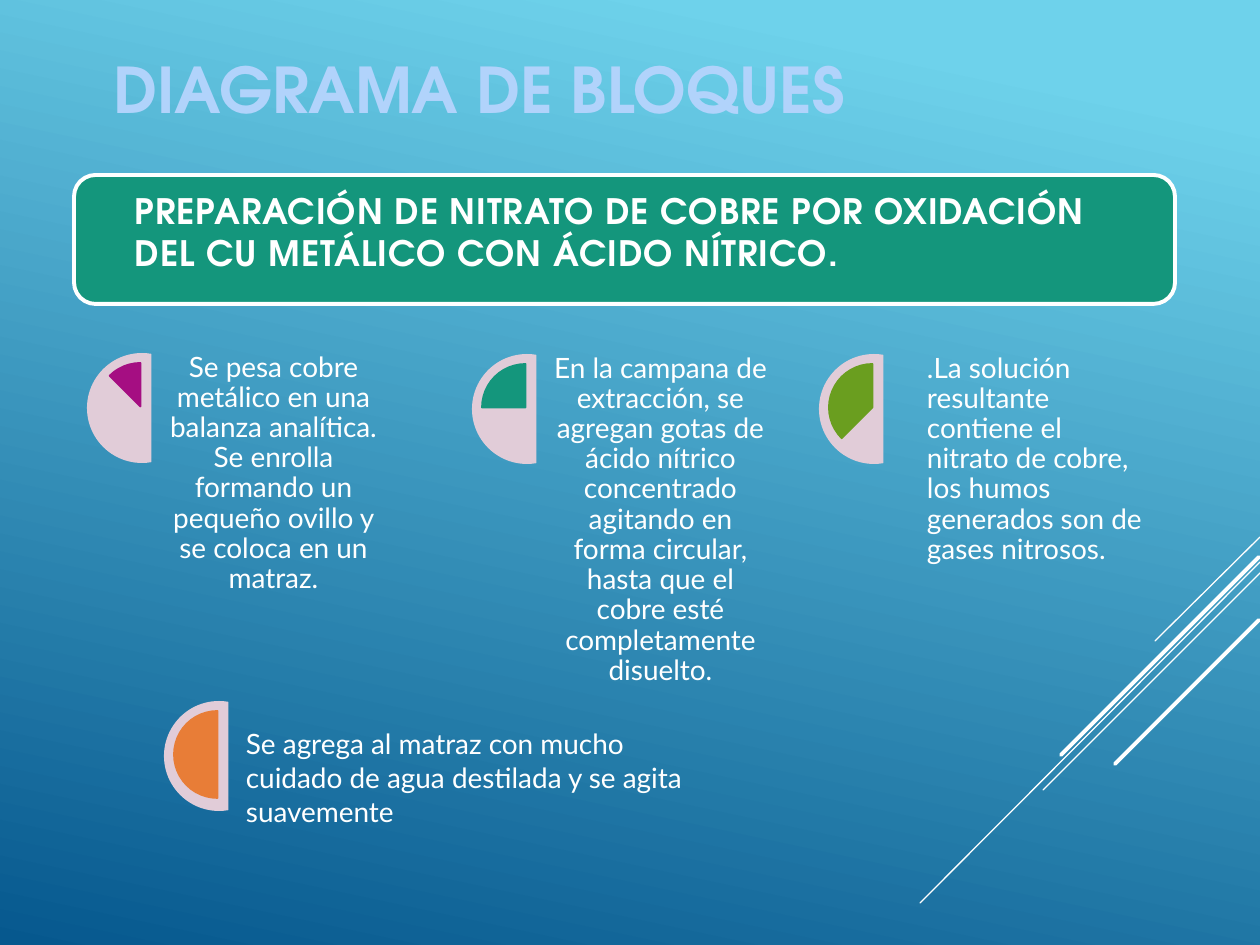
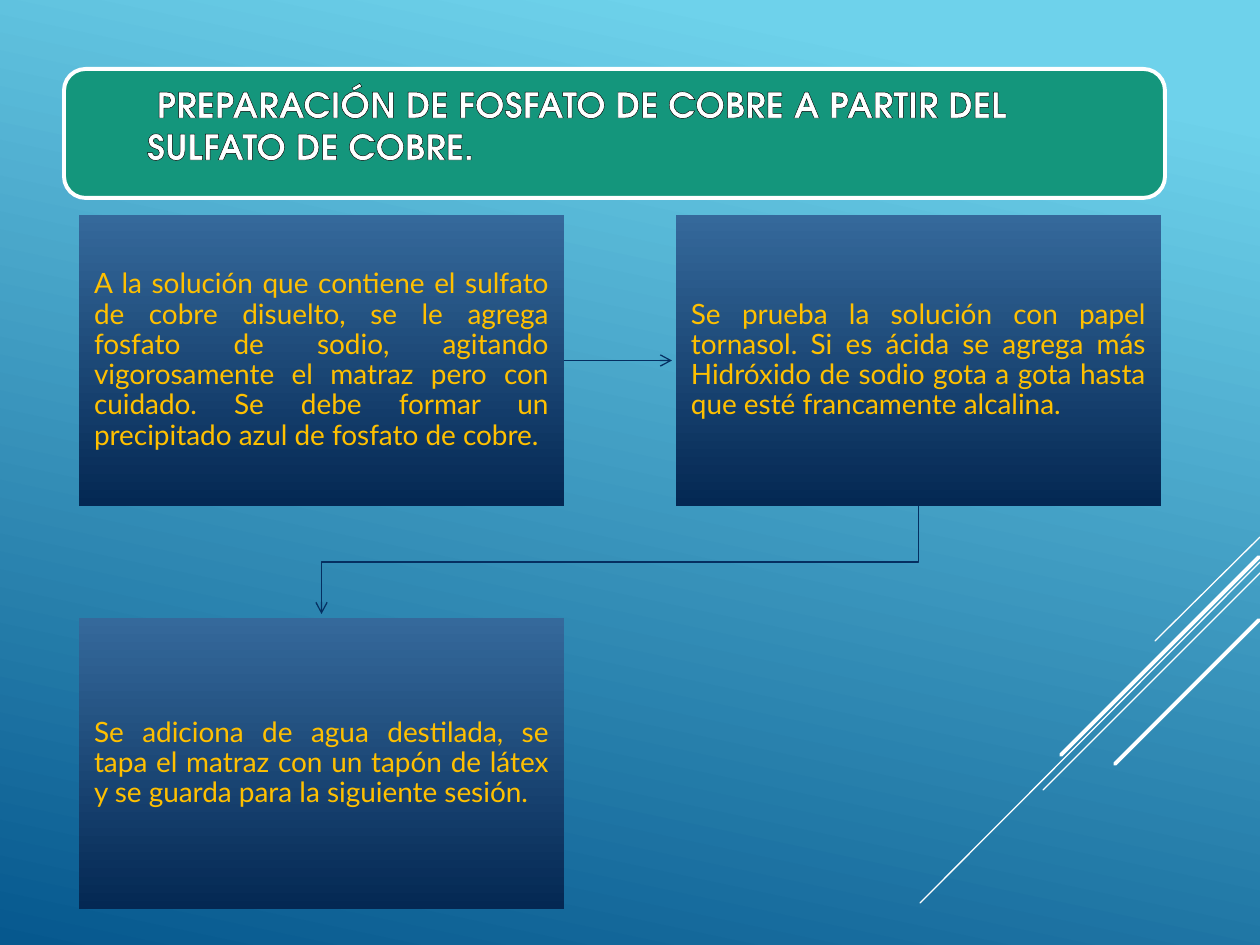
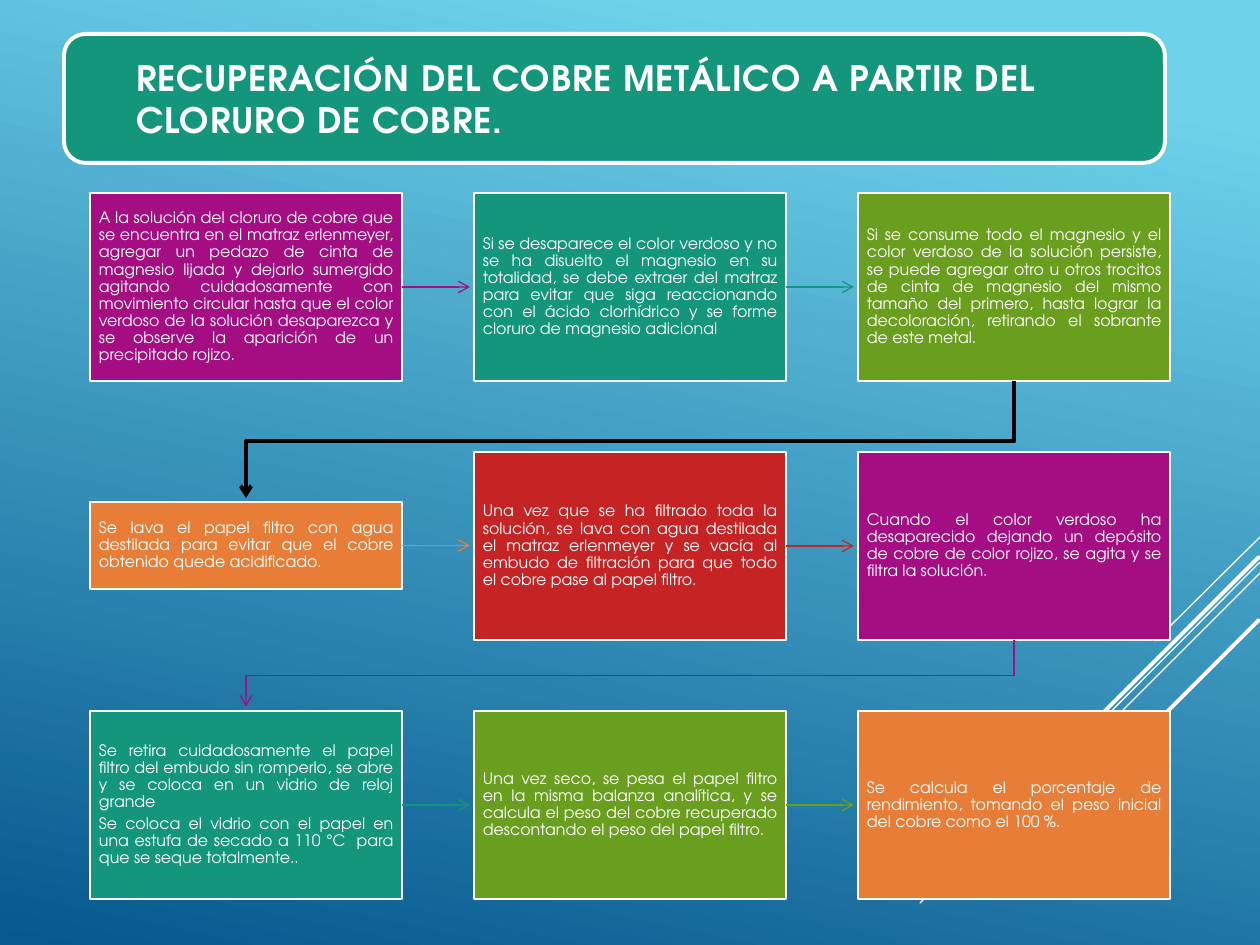
from pptx import Presentation
from pptx.dml.color import RGBColor
from pptx.enum.shapes import MSO_CONNECTOR, MSO_SHAPE
from pptx.enum.text import MSO_ANCHOR, PP_ALIGN
from pptx.oxml import parse_xml
from pptx.oxml.ns import nsdecls
from pptx.util import Emu, Pt

LEFT, CENTER, JUSTIFY = PP_ALIGN.LEFT, PP_ALIGN.CENTER, PP_ALIGN.JUSTIFY
TOP, MIDDLE = MSO_ANCHOR.TOP, MSO_ANCHOR.MIDDLE
STRAIGHT = MSO_CONNECTOR.STRAIGHT
RECT, ROUND = MSO_SHAPE.RECTANGLE, MSO_SHAPE.ROUNDED_RECTANGLE
CHORD, PIE = MSO_SHAPE.CHORD, MSO_SHAPE.PIE

SCALE = 914400 / 126
BODY, HEAD = "Lato", "TeX Gyre Adventor"
INSET = (13, 6, 13, 6)
GAP = 4
COLORS = {
    "sky": "6ED2EB", "sea": "06588E", "white": "FFFFFF", "black": "000000",
    "title": "B1D3FB", "navy": "052F61", "steel": "35699B", "night": "042853",
    "gold": "FFC000", "rose": "E1CCD8", "plum": "A50E82", "teal": "14967C",
    "green": "6A9E1F", "orange": "E87D37", "red": "C62324",
}
RAYS = [
    (1260, 537, 1155, 641, 0.75), (1260, 562, 920, 903, 0.75),
    (1260, 573, 1043, 790, 0.75), (1259, 557, 1061, 755, 2.25),
    (1259, 620, 1115, 764, 2.25),
]
SHADOW = ('<a:effectLst %s><a:outerShdw blurRad="38100" dist="25400" dir="2700000">'
          '<a:srgbClr val="000000"><a:alpha val="40000"/></a:srgbClr>'
          '</a:outerShdw></a:effectLst>')
OUTLINE = ('<a:ln %s w="9525"><a:solidFill><a:srgbClr val="000000"/>'
           '</a:solidFill></a:ln>')


def px(*vals):
    return [Emu(round(v * SCALE)) for v in vals]


def rgb(name):
    return RGBColor.from_string(COLORS[name])


def xml(text):
    return parse_xml(text % nsdecls("a"))


def shade(fill, stops, angle):
    fill.gradient()
    fill.gradient_angle = angle
    for stop, (spot, name) in zip(fill.gradient_stops, stops):
        stop.position = spot
        stop.color.rgb = rgb(name)


def stroke(shape, color, width):
    shape.line.color.rgb = rgb(color)
    shape.line.width = Pt(width)


def write(shape, texts, size, font=BODY, color="white", align=LEFT, anchor=TOP,
          inset=INSET, tight=False, bold=False, effect=None, track=0):
    frame = shape.text_frame
    frame.word_wrap = True
    frame.vertical_anchor = anchor
    (frame.margin_left, frame.margin_top,
     frame.margin_right, frame.margin_bottom) = px(*inset)
    for i, text in enumerate(texts):
        para = frame.add_paragraph() if i else frame.paragraphs[0]
        para.alignment = align
        if tight:
            para.line_spacing = 0.9
            para.space_after = Pt(round(size * 0.35, 1))
        run = para.add_run()
        run.text = text
        para.font.name = font
        para.font.size = Pt(size)
        para.font.bold = bold
        para.font.color.rgb = rgb(color)
        if effect:
            props = run.font._element
            props.append(xml(effect))
            if track:
                props.set("spc", str(track))


def label(slide, box, text, size, **style):
    write(slide.shapes.add_textbox(*px(*box)), [text], size, **style)


def shape(slide, kind, box, fill=None, line=None, width=1):
    item = slide.shapes.add_shape(kind, *px(*box))
    item.shadow.inherit = False
    if fill:
        item.fill.solid()
        item.fill.fore_color.rgb = rgb(fill)
    if line:
        stroke(item, line, width)
    else:
        item.line.fill.background()
    return item


def point(item):
    item.element.spPr.get_or_add_ln().append(xml('<a:tailEnd %s type="arrow"/>'))


def link(slide, ends, color, width):
    line = slide.shapes.add_connector(STRAIGHT, *ends)
    stroke(line, color, width)
    line.element.spPr.append(xml("<a:effectLst %s/>"))
    return line


def arrow(slide, start, end, color):
    y = start.top + start.height // 2
    line = link(slide, (start.left + start.width, y, end.left - px(GAP)[0], y),
                color, 0.75)
    line.begin_connect(start, 3)
    point(line)


def elbow(slide, start, end, color, width=0.75):
    x1, y1 = start.left + start.width // 2, start.top + start.height
    x2, y2 = end.left + end.width // 2, end.top
    mid = (y1 + y2) // 2
    path = slide.shapes.build_freeform(x1, y1)
    path.add_line_segments([(x1, mid), (x2, mid), (x2, y2 - px(GAP)[0])], close=False)
    item = path.convert_to_shape()
    item.shadow.inherit = False
    item.fill.background()
    stroke(item, color, width)
    point(item)


def base(deck):
    slide = deck.slides.add_slide(deck.slide_layouts[6])
    shade(slide.background.fill, [(0.1, "sky"), (1, "sea")], 258)
    for *ends, width in RAYS:
        ray = link(slide, px(*ends), "white", width)
        ray.element.spPr.get_or_add_ln().set("cap", "rnd")
    return slide


def band(slide, x, y, inner, text, effect=SHADOW, track=50):
    dx, dy, wide = inner
    shape(slide, ROUND, (x, y, 1101, 129), "teal", "white", 2.25)
    label(slide, (x + dx, y + dy, wide, 97), text, 20, font=HEAD, bold=True,
          effect=effect, track=track)


def dial(slide, x, y, color, angle):
    disc = shape(slide, CHORD, (x, y, 110, 110), "rose")
    disc.adjustments[0], disc.adjustments[1] = 48, 168
    part = shape(slide, PIE, (x + 10, y + 10, 87, 87), color, color)
    part.adjustments[0], part.adjustments[1] = angle, 162


def nitrate(deck):
    slide = base(deck)
    label(slide, (100, 45, 853, 89), "DIAGRAMA DE BLOQUES", 36, font=HEAD,
          color="title", bold=True)
    steps = [
        (87, 353, "plum", 77, CENTER,
         "Se pesa cobre metálico en una balanza analítica. Se enrolla formando un "
         "pequeño ovillo y se coloca en un matraz."),
        (472, 354, "teal", 79, CENTER,
         "En la campana de extracción, se agregan gotas de ácido nítrico concentrado "
         "agitando en forma circular, hasta que el cobre esté completamente disuelto."),
        (819, 354, "green", 108, LEFT,
         ".La solución resultante contiene el nitrato de cobre, los humos generados "
         "son de gases nitrosos."),
    ]
    for i, (x, y, color, dx, align, text) in enumerate(steps):
        dial(slide, x, y, color, 135 - 27 * i)
        label(slide, (x + dx, y, 219, 437), text, 16, align=align,
              inset=(0, 0, 0, 0), tight=True)
    dial(slide, 164, 701, "orange", 54)
    label(slide, (233, 721, 506, 81),
          "Se agrega al matraz con mucho cuidado de agua destilada y se agita "
          "suavemente", 16)
    band(slide, 74, 175, (48, 8, 1002),
         "PREPARACIÓN DE NITRATO DE COBRE POR OXIDACIÓN DEL CU METÁLICO CON ÁCIDO "
         "NÍTRICO.")


def phosphate(deck):
    slide = base(deck)
    band(slide, 64, 69, (70, 8, 942),
         " PREPARACIÓN DE FOSFATO DE COBRE A PARTIR DEL SULFATO DE COBRE.",
         OUTLINE, 0)
    steps = [
        "A la solución que contiene el sulfato de cobre disuelto, se le agrega fosfato "
        "de sodio, agitando vigorosamente el matraz pero con cuidado. Se debe formar un "
        "precipitado azul de fosfato de cobre.",
        "Se prueba la solución con papel tornasol. Si es ácida se agrega más Hidróxido "
        "de sodio gota a gota hasta que esté francamente alcalina.",
        "Se adiciona de agua destilada, se tapa el matraz con un tapón de látex y se "
        "guarda para la siguiente sesión.",
    ]
    cards = []
    for i, text in enumerate(steps):
        row, col = divmod(i, 2)
        card = shape(slide, RECT, (79 + 597 * col, 215 + 403 * row, 485, 291))
        shade(card.fill, [(0, "steel"), (1, "night")], 270)
        write(card, [text], 16, color="gold", align=JUSTIFY, anchor=MIDDLE,
              inset=(15,) * 4, tight=True)
        cards.append(card)
    arrow(slide, cards[0], cards[1], "navy")
    elbow(slide, cards[1], cards[2], "navy")


def recovery(deck):
    slide = base(deck)
    band(slide, 64, 34, (59, 16, 1042),
         "RECUPERACIÓN DEL COBRE METÁLICO A PARTIR DEL CLORURO DE COBRE.")
    grid = [
        [("plum", 188, [
            "A la solución del cloruro de cobre que se encuentra en el matraz erlenmeyer, "
            "agregar un pedazo de cinta de magnesio lijada y dejarlo sumergido agitando "
            "cuidadosamente con movimiento circular hasta que el color verdoso de la "
            "solución desaparezca y se observe la aparición de un precipitado rojizo."]),
         ("teal", 188, [
             "Si se desaparece el color verdoso y no se ha disuelto el magnesio en su "
             "totalidad, se debe extraer del matraz para evitar que siga reaccionando con "
             "el ácido clorhídrico y se forme cloruro de magnesio adicional"]),
         ("green", 188, [
             "Si se consume todo el magnesio y el color verdoso de la solución persiste, "
             "se puede agregar otro u otros trocitos de cinta de magnesio del mismo "
             "tamaño del primero, hasta lograr la decoloración, retirando el sobrante de "
             "este metal."])],
        [("orange", 87, [
            "Se lava el papel filtro con agua destilada para evitar que el cobre obtenido "
            "quede acidificado."]),
         ("red", 188, [
             "Una vez que se ha filtrado toda la solución, se lava con agua destilada el "
             "matraz erlenmeyer y se vacía al embudo de filtración para que todo el cobre "
             "pase al papel filtro."]),
         ("plum", 188, [
             "Cuando el color verdoso ha desaparecido dejando un depósito de cobre de "
             "color rojizo, se agita y se filtra la solución."])],
        [("teal", 188, [
            "Se retira cuidadosamente el papel filtro del embudo sin romperlo, se abre y "
            "se coloca en un vidrio de reloj grande",
            "Se coloca el vidrio con el papel en una estufa de secado a 110 °C  para que "
            "se seque totalmente.."]),
         ("green", 188, [
             "Una vez seco, se pesa el papel filtro en la misma balanza analítica, y se "
             "calcula el peso del cobre recuperado descontando el peso del papel filtro."]),
         ("orange", 188, [
             "Se calcula el porcentaje de rendimiento, tomando el peso inicial del cobre "
             "como el 100 %."])],
    ]
    rows = []
    for r, line in enumerate(grid):
        cards = []
        for c, (color, high, texts) in enumerate(line):
            y = 193 + 259 * r + (188 - high) // 2
            card = shape(slide, RECT, (90 + 384 * c, y, 312, high), color, "white")
            write(card, texts, 9, font=HEAD, align=JUSTIFY, anchor=MIDDLE,
                  inset=(9,) * 4, tight=True)
            cards.append(card)
        for c in range(2):
            arrow(slide, cards[c], cards[c + 1], line[c][0])
        rows.append(cards)
    elbow(slide, rows[0][2], rows[1][0], "black", 2.25)
    elbow(slide, rows[1][2], rows[2][0], "plum")


def main():
    deck = Presentation()
    deck.slide_width, deck.slide_height = px(1260, 945)
    nitrate(deck)
    phosphate(deck)
    recovery(deck)
    deck.save("out.pptx")


if __name__ == "__main__":
    main()
